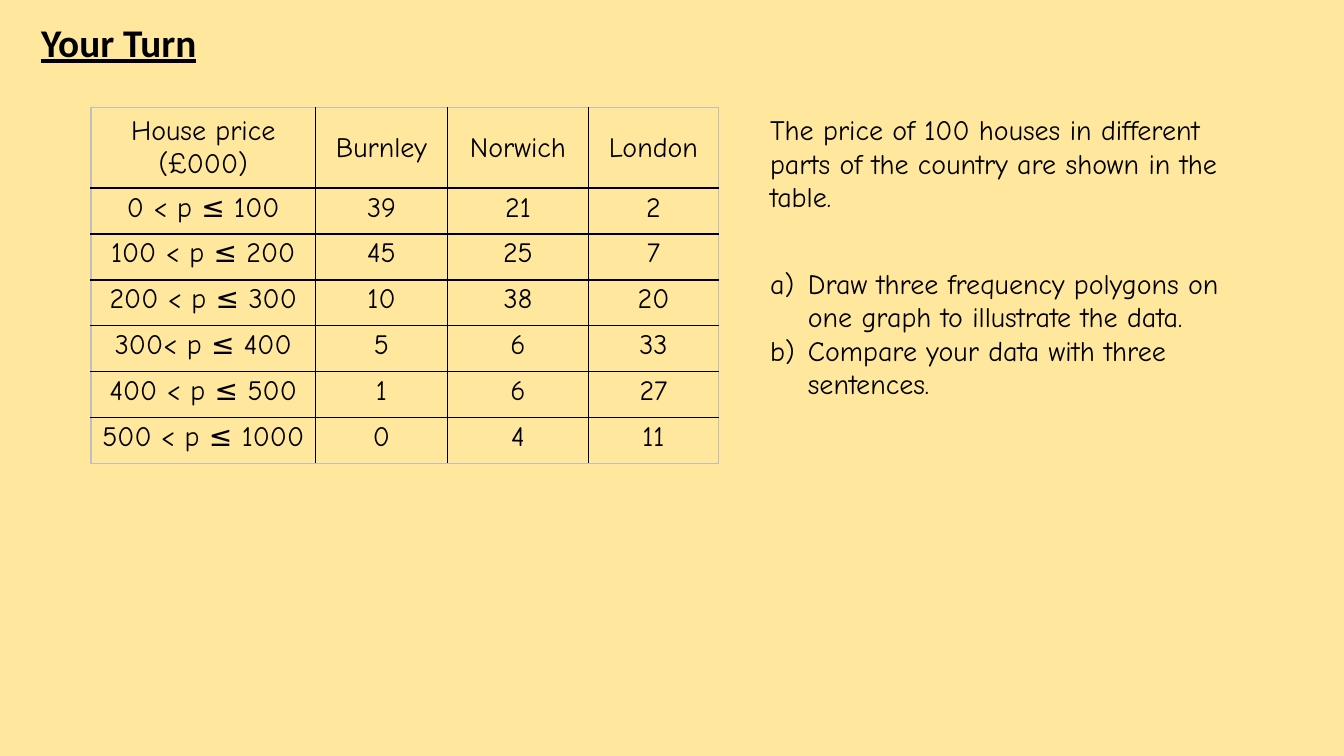
"""Build the frequency polygon exercise slide on house prices."""
import pptx
import pptx.dml.color
import pptx.enum.text
import pptx.oxml
import pptx.oxml.ns
import pptx.util
from lxml import etree

Pt = pptx.util.Pt
COLOURS = {"background": "FFE79E", "text": "000000", "grid": "000000", "edge": "BFBFBF"}
BODY = {"name": "Comic Neue", "size": Pt(20)}
HEADING = {"name": "Calibri", "size": Pt(28), "bold": True, "underline": True}
COLUMN_WIDTHS = [160.4, 94.3, 100.7, 92.9]
HEADER_HEIGHT = 57.4
ROW_HEIGHT = 32.8
PRICES = [
    ["House price (£000)", "Burnley", "Norwich", "London"],
    ["0 < p ≤ 100", "39", "21", "2"],
    ["100 < p ≤ 200", "45", "25", "7"],
    ["200 < p ≤ 300", "10", "38", "20"],
    ["300< p ≤ 400", "5", "6", "33"],
    ["400 < p ≤ 500", "1", "6", "27"],
    ["500 < p ≤ 1000", "0", "4", "11"],
]
INTRODUCTION = "The price of 100 houses in different parts of the country are shown in the table."
QUESTIONS = [
    "Draw three frequency polygons on one graph to illustrate the data.",
    "Compare your data with three sentences.",
]


def colour(name):
    """Return the named colour as an RGB value."""
    return pptx.dml.color.RGBColor.from_string(COLOURS[name])


def format_font(font, values):
    """Apply a dict of format values and the text colour to a font."""
    for name, value in values.items():
        setattr(font, name, value)
    font.color.rgb = colour("text")


def number_paragraph(paragraph):
    """Give a paragraph a lettered number with a hanging indent."""
    properties = paragraph._p.get_or_add_pPr()
    properties.set("marL", str(Pt(27)))
    properties.set("indent", str(Pt(-27)))
    number = etree.SubElement(properties, pptx.oxml.ns.qn("a:buAutoNum"))
    number.set("type", "alphaLcParenR")


def add_text(slide, left, top, width, height, lines, values, numbered=False):
    """Add a wrapped text box with one paragraph per line."""
    box = slide.shapes.add_textbox(Pt(left), Pt(top), Pt(width), Pt(height))
    frame = box.text_frame
    frame.word_wrap = True
    for index, line in enumerate(lines):
        paragraph = frame.add_paragraph() if index else frame.paragraphs[0]
        if numbered:
            number_paragraph(paragraph)
        run = paragraph.add_run()
        run.text = line
        format_font(run.font, values)


def set_borders(cell, borders):
    """Draw the cell borders given as (side, colour name, width)."""
    properties = cell._tc.get_or_add_tcPr()
    for index, (side, name, width) in enumerate(borders):
        line = pptx.oxml.parse_xml(
            f'<a:ln{side} {pptx.oxml.ns.nsdecls("a")} w="{Pt(width)}"><a:solidFill>'
            f'<a:srgbClr val="{COLOURS[name]}"/></a:solidFill></a:ln{side}>'
        )
        properties.insert(index, line)


def fill_cell(cell, text, row, column):
    """Write, format and border one table cell."""
    last_row, last_column = len(PRICES) - 1, len(COLUMN_WIDTHS) - 1
    cell.fill.background()
    cell.margin_left = cell.margin_right = Pt(5.4)
    cell.margin_top = cell.margin_bottom = Pt(2.7)
    if row == 0:
        cell.vertical_anchor = pptx.enum.text.MSO_ANCHOR.MIDDLE
    paragraph = cell.text_frame.paragraphs[0]
    paragraph.alignment = pptx.enum.text.PP_ALIGN.CENTER
    run = paragraph.add_run()
    run.text = text
    format_font(run.font, BODY)
    set_borders(cell, [
        ("L", "grid" if column else "edge", 1),
        ("R", "grid" if column < last_column else "edge", 1),
        ("T", "grid" if row else "edge", 1.5 if row == 1 else 1),
        ("B", "grid" if row < last_row else "edge", 1.5 if row == 0 else 1),
    ])


def add_price_table(slide, left, top):
    """Add the table of house prices by town."""
    height = HEADER_HEIGHT + ROW_HEIGHT * (len(PRICES) - 1)
    table = slide.shapes.add_table(
        len(PRICES), len(COLUMN_WIDTHS),
        Pt(left), Pt(top), Pt(sum(COLUMN_WIDTHS)), Pt(height),
    ).table
    table.first_row = table.horz_banding = False
    for column, width in enumerate(COLUMN_WIDTHS):
        table.columns[column].width = Pt(width)
    for row, texts in enumerate(PRICES):
        table.rows[row].height = Pt(ROW_HEIGHT if row else HEADER_HEIGHT)
        for column, text in enumerate(texts):
            fill_cell(table.cell(row, column), text, row, column)


def main():
    """Build and save the slide."""
    presentation = pptx.Presentation()
    presentation.slide_width, presentation.slide_height = Pt(960), Pt(540)
    slide = presentation.slides.add_slide(presentation.slide_layouts[6])
    slide.background.fill.solid()
    slide.background.fill.fore_color.rgb = colour("background")
    add_price_table(slide, 65, 77)
    add_text(slide, 543, 186.5, 360, 104.4, QUESTIONS, BODY, numbered=True)
    add_text(slide, 543, 77, 360, 80, [INTRODUCTION], BODY)
    add_text(slide, 22.3, 9.4, 420.5, 41, ["Your Turn"], HEADING)
    presentation.save("out.pptx")


if __name__ == "__main__":
    main()
